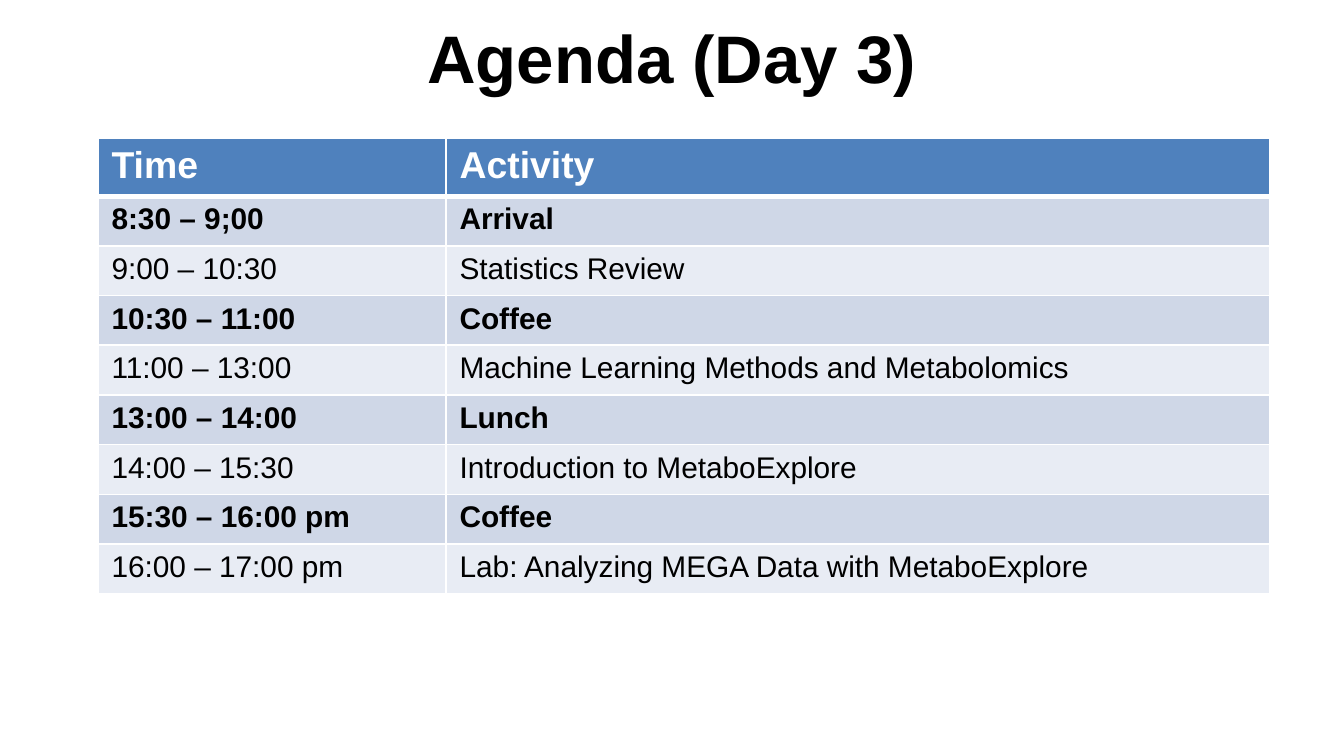
from dataclasses import dataclass

from lxml import etree
from pptx import Presentation
from pptx.dml.color import RGBColor
from pptx.enum.text import MSO_ANCHOR, PP_ALIGN
from pptx.oxml.ns import qn
from pptx.util import Inches, Pt

CENTER = PP_ALIGN.CENTER
LEFT = PP_ALIGN.LEFT
MIDDLE = MSO_ANCHOR.MIDDLE
TOP = MSO_ANCHOR.TOP
TITLE_ONLY = 5


@dataclass(frozen=True)
class Theme:
    """Holds the colours, font, type sizes and line widths of the slide."""

    font: str = "Arial"
    text: str = "000000"
    white: str = "FFFFFF"
    header: str = "4F81BD"
    bands: tuple = ("CFD7E7", "E8ECF4")
    title_size: int = 36
    header_size: int = 20
    body_size: int = 16
    thin_line: int = 1
    thick_line: int = 3


THEME = Theme()
COLUMN_WIDTHS = (2.59, 6.13)
HEADER_HEIGHT = 0.43
ROW_HEIGHT = 0.37
HEADINGS = ("Time", "Activity")
SESSIONS = (
    ("8:30 – 9;00", "Arrival"),
    ("9:00 – 10:30", "Statistics Review"),
    ("10:30 – 11:00", "Coffee"),
    ("11:00 – 13:00", "Machine Learning Methods and Metabolomics"),
    ("13:00 – 14:00", "Lunch"),
    ("14:00 – 15:30", "Introduction to MetaboExplore"),
    ("15:30 – 16:00 pm", "Coffee"),
    ("16:00 – 17:00 pm", "Lab: Analyzing MEGA Data with MetaboExplore"),
)


def write_text(frame, text, *, size, color=THEME.text, bold=False, align=LEFT):
    """Write one formatted paragraph into a text frame."""
    paragraph = frame.paragraphs[0]
    paragraph.alignment = align
    run = paragraph.add_run()
    run.text = text
    run.font.name = THEME.font
    run.font.size = Pt(size)
    run.font.bold = bold
    run.font.color.rgb = RGBColor.from_string(color)


def set_borders(cell, **widths):
    """Draw white borders on a cell, with widths in points keyed by side."""
    properties = cell._tc.get_or_add_tcPr()
    for side in "LRTB":
        width = Pt(widths.get(side, THEME.thin_line))
        line = etree.SubElement(properties, qn(f"a:ln{side}"), w=str(int(width)))
        fill = etree.SubElement(line, qn("a:solidFill"))
        etree.SubElement(fill, qn("a:srgbClr"), val=THEME.white)


def fill_row(row, texts, *, fill, borders, **text_format):
    """Fill, outline and write the cells of one table row."""
    for cell, text in zip(row.cells, texts):
        set_borders(cell, **borders)
        cell.fill.solid()
        cell.fill.fore_color.rgb = RGBColor.from_string(fill)
        cell.vertical_anchor = TOP
        write_text(cell.text_frame, text, **text_format)


def place_title(slide, text, left, top, width, height):
    """Place the title placeholder in the given box."""
    title = slide.shapes.title
    title.left, title.top = Inches(left), Inches(top)
    title.width, title.height = Inches(width), Inches(height)
    title.text_frame.word_wrap = True
    title.text_frame.vertical_anchor = MIDDLE
    write_text(title.text_frame, text, size=THEME.title_size, bold=True, align=CENTER)


def place_agenda(slide, left, top, width, height):
    """Place the agenda table in the given box."""
    table = slide.shapes.add_table(
        len(SESSIONS) + 1, len(HEADINGS),
        Inches(left), Inches(top), Inches(width), Inches(height),
    ).table
    for column, column_width in zip(table.columns, COLUMN_WIDTHS):
        column.width = Inches(column_width)
    header, *body = table.rows
    header.height = Inches(HEADER_HEIGHT)
    fill_row(header, HEADINGS, fill=THEME.header, borders={"B": THEME.thick_line},
             size=THEME.header_size, color=THEME.white, bold=True)
    for index, (row, session) in enumerate(zip(body, SESSIONS)):
        row.height = Inches(ROW_HEIGHT)
        borders = {"T": THEME.thick_line} if index == 0 else {}
        fill_row(row, session, fill=THEME.bands[index % 2], borders=borders,
                 size=THEME.body_size, bold=index % 2 == 0)


def main():
    """Build the agenda slide and save it."""
    presentation = Presentation()
    presentation.slide_width = Inches(10)
    presentation.slide_height = presentation.slide_width * 9 // 16
    slide = presentation.slides.add_slide(presentation.slide_layouts[TITLE_ONLY])
    place_title(slide, "Agenda (Day 3)", 0.5, -0.05, 9, 0.94)
    table_height = HEADER_HEIGHT + ROW_HEIGHT * len(SESSIONS)
    place_agenda(slide, 0.73, 1.03, sum(COLUMN_WIDTHS), table_height)
    presentation.save("out.pptx")


if __name__ == "__main__":
    main()
